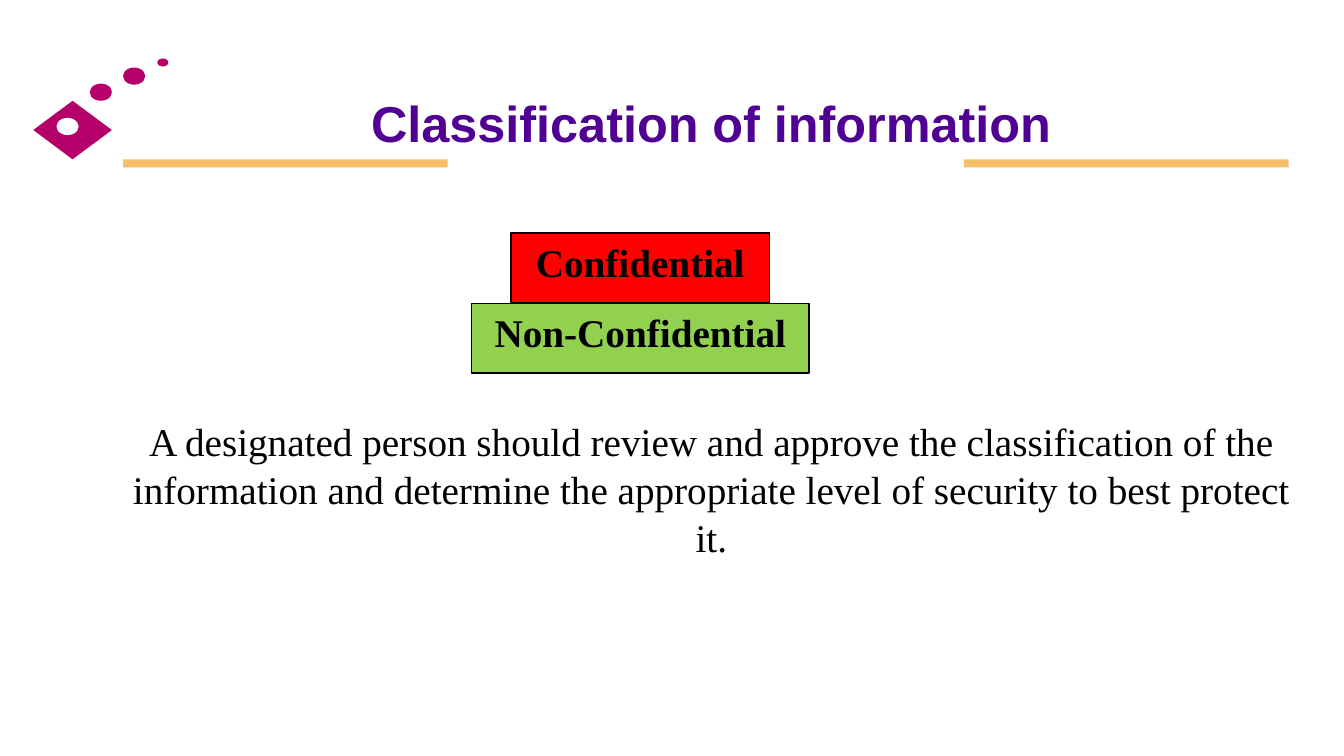
from pptx import Presentation
from pptx.dml.color import RGBColor
from pptx.enum.shapes import MSO_SHAPE
from pptx.enum.text import MSO_ANCHOR, PP_ALIGN
from pptx.util import Inches, Pt

COLORS = {
    "gold": "F6BF69",
    "magenta": "B50069",
    "purple": "500093",
    "white": "FFFFFF",
    "black": "000000",
    "red": "FF0000",
    "green": "92D050",
}
REVIEW_RULE = (
    "A designated person should review and approve the classification of the "
    "information and determine the appropriate level of security to best protect it."
)


def color(name):
    return RGBColor.from_string(COLORS[name])


def write(target, text, size=28, font="Times New Roman", ink="black",
          bold=False, anchor=MSO_ANCHOR.TOP, line_spacing=None):
    frame = target.text_frame
    frame.word_wrap = True
    frame.vertical_anchor = anchor
    paragraph = frame.paragraphs[0]
    paragraph.alignment = PP_ALIGN.CENTER
    paragraph.line_spacing = line_spacing
    run = paragraph.add_run()
    run.text = text
    run.font.size = Pt(size)
    run.font.name = font
    run.font.bold = bold
    run.font.color.rgb = color(ink)


def add_block(slide, kind, box, fill, outline=None):
    block = slide.shapes.add_shape(kind, *map(Inches, box))
    block.shadow.inherit = False
    block.fill.solid()
    block.fill.fore_color.rgb = color(fill)
    if outline:
        block.line.color.rgb = color(outline)
        block.line.width = Pt(1)
    else:
        block.line.fill.background()
    return block


def add_text(slide, box, text, **text_format):
    write(slide.shapes.add_textbox(*map(Inches, box)), text, **text_format)


def add_ornament(slide):
    # Gold bars on both sides of the title
    for left in (1.22, 9.56):
        add_block(slide, MSO_SHAPE.RECTANGLE, (left, 1.58, 3.22, 0.08), "gold")
    # Diamond with its eye and the rising dots
    add_block(slide, MSO_SHAPE.DIAMOND, (0.33, 1, 0.78, 0.58), "magenta")
    for left, top, width, height, fill in (
        (0.56, 1.17, 0.22, 0.17, "white"),
        (0.89, 0.83, 0.22, 0.17, "magenta"),
        (1.22, 0.67, 0.22, 0.17, "magenta"),
        (1.56, 0.58, 0.11, 0.08, "magenta"),
    ):
        add_block(slide, MSO_SHAPE.OVAL, (left, top, width, height), fill)


def add_levels(slide):
    center, height = 6.35, 0.69
    levels = (
        ("Confidential", 2.31, 2.56, "red"),
        ("Non-Confidential", 3.01, 3.35, "green"),
    )
    for label, top, width, fill in levels:
        box = (center - width / 2, top, width, height)
        level = add_block(slide, MSO_SHAPE.RECTANGLE, box, fill, outline="black")
        write(level, label, bold=True)


def main():
    presentation = Presentation()
    presentation.slide_width = Inches(13.33)
    presentation.slide_height = Inches(7.5)
    slide = presentation.slides.add_slide(presentation.slide_layouts[6])

    add_ornament(slide)

    # Title and review rule
    add_text(slide, (1.11, 0.67, 11.89, 1.08), "Classification of information",
             size=36, font="Arial", ink="purple", bold=True,
             anchor=MSO_ANCHOR.MIDDLE)
    add_text(slide, (1.11, 4.09, 11.89, 1.6), REVIEW_RULE, line_spacing=Pt(34))

    # Classification levels
    add_levels(slide)

    presentation.save("out.pptx")


if __name__ == "__main__":
    main()
